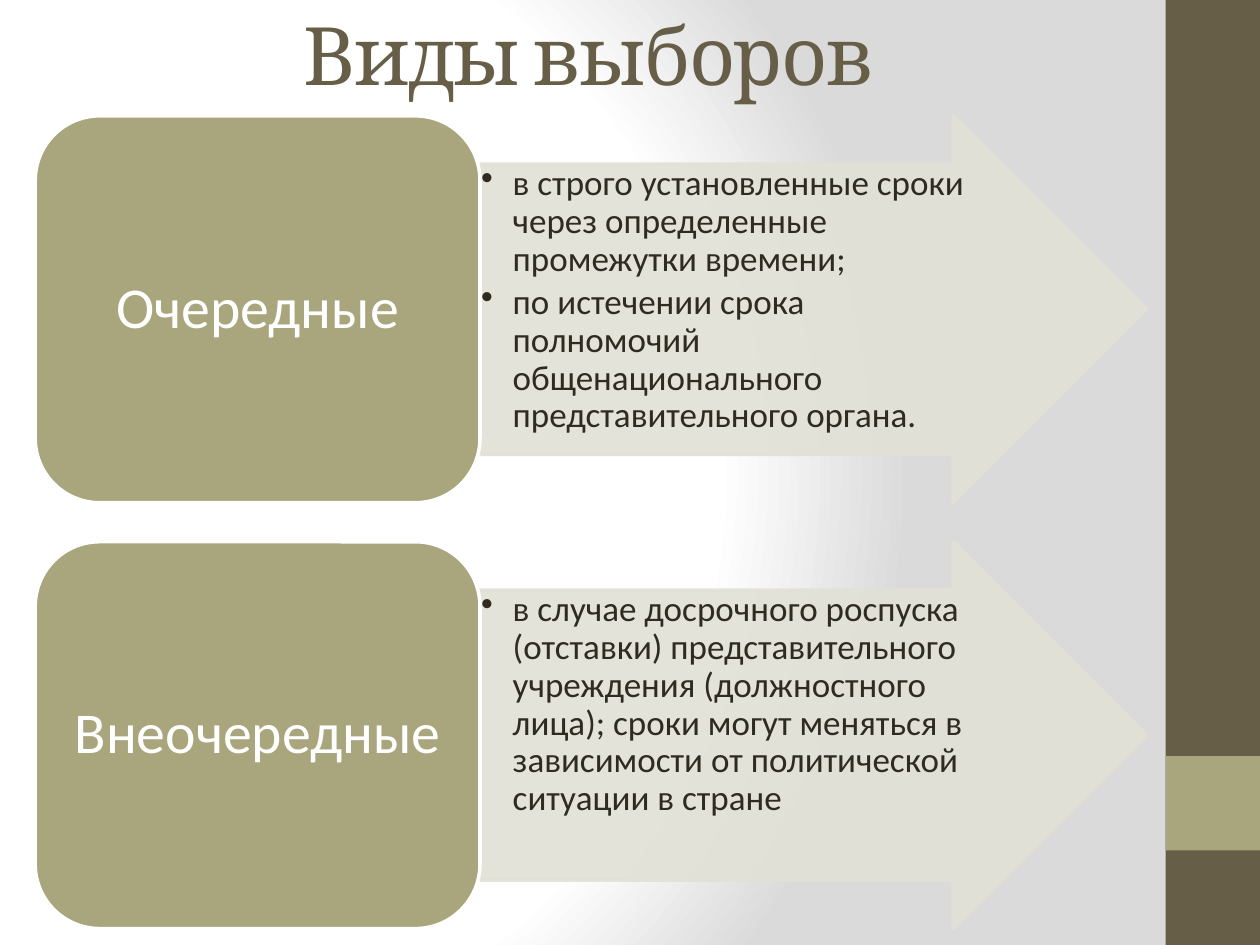
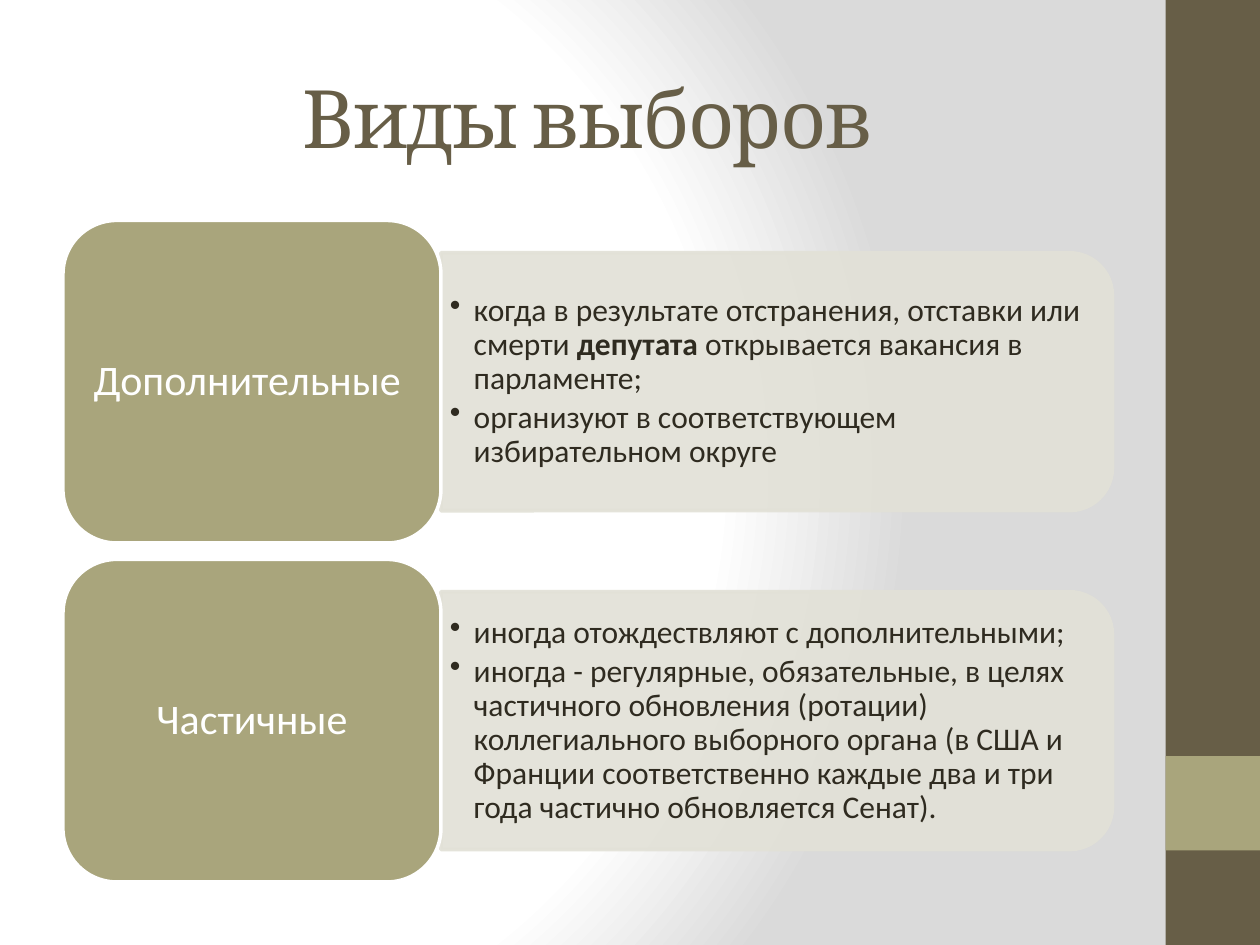
"""Build two slides on kinds of elections: label boxes with explanatory shapes."""
from lxml import etree
from pptx import Presentation
from pptx.dml.color import RGBColor
from pptx.enum.shapes import MSO_SHAPE
from pptx.enum.text import MSO_ANCHOR, PP_ALIGN
from pptx.oxml.ns import qn
from pptx.util import Inches, Pt

RECTANGLE = MSO_SHAPE.RECTANGLE
ROUNDED = MSO_SHAPE.ROUNDED_RECTANGLE
ARROW = MSO_SHAPE.RIGHT_ARROW
ROUND_END = MSO_SHAPE.ROUND_2_SAME_RECTANGLE
TOP, MIDDLE = MSO_ANCHOR.TOP, MSO_ANCHOR.MIDDLE
CENTER, LEFT = PP_ALIGN.CENTER, PP_ALIGN.LEFT

WIDTH, HEIGHT = 10, 7.5
BROWN, OLIVE, PALE, INK, WHITE, GREY = "675E47", "A9A57C", "E2E1D7", "2F2B20", "FFFFFF", "DADADA"
TITLE_FONT, BODY_FONT = "Cambria", "Calibri"
CORNER_INSET = 0.0488
BACKGROUND_STOPS = [(0, WHITE), (75, WHITE), (100, GREY)]
BACKGROUND_FOCUS = {"l": 20, "t": 50, "r": 100, "b": 50}
BANDS = [((WIDTH * 0.925, 0, WIDTH * 0.075, HEIGHT), BROWN),
         ((WIDTH * 0.925, HEIGHT * 0.8, WIDTH * 0.075, HEIGHT * 0.1), OLIVE)]

SLIDES = [
    {
        "title": "Виды выборов", "title_at": (0.51, 0, 8.33, 0.85),
        "body": ARROW, "left": 0.28, "top": 0.92, "label_width": 3.53, "body_width": 5.29,
        "row_height": 3.07, "row_step": 3.38, "anchor": TOP,
        "label_size": 33, "label_margins": (0.14, 0.07),
        "text_size": 20, "text_margins": (0.01, 0.01), "indent": 0.25,
        "rows": [
            ("Очередные", [
                ["в строго установленные сроки через определенные промежутки времени;"],
                ["по истечении срока полномочий общенационального представительного органа."]]),
            ("Внеочередные", [
                ["в случае досрочного роспуска (отставки) представительного учреждения "
                 "(должностного лица); сроки могут меняться в зависимости от политической "
                 "ситуации в стране"]]),
        ],
    },
    {
        "title": "Виды выборов", "title_at": (0.5, 0.3, 8.33, 1.25),
        "body": ROUND_END, "left": 0.5, "top": 1.75, "label_width": 3, "body_width": 5.33,
        "row_height": 2.56, "row_step": 2.69, "anchor": MIDDLE,
        "label_size": 24, "label_margins": (0.1, 0.05),
        "text_size": 18, "text_margins": (0.07, 0.04), "indent": 0.19,
        "rows": [
            ("Дополнительные ", [
                ["когда в результате отстранения, отставки или смерти ", "депутата",
                 " открывается вакансия в парламенте;"],
                ["организуют в соответствующем избирательном округе"]]),
            ("Частичные", [
                ["иногда отождествляют с дополнительными;"],
                ["иногда - регулярные, обязательные, в целях частичного обновления (ротации) "
                 "коллегиального выборного органа (в США и Франции соответственно каждые два "
                 "и три года частично обновляется Сенат)."]]),
        ],
    },
]


def color(value):
    return RGBColor.from_string(value)


def place(box):
    return [Inches(length) for length in box]


def style_run(run, font, size, ink, bold=False):
    run.font.name, run.font.size, run.font.bold = font, Pt(size), bold
    run.font.color.rgb = color(ink)


def add_block(slide, kind, box, fill, line=None, opacity=100):
    shape = slide.shapes.add_shape(kind, *place(box))
    shape.shadow.inherit = False
    shape.fill.solid()
    shape.fill.fore_color.rgb = color(fill)
    if line:
        shape.line.color.rgb = color(line)
        shape.line.width = Pt(2)
    else:
        shape.line.fill.background()
    if opacity < 100:
        for paint in shape.element.spPr.iter(qn("a:srgbClr")):
            etree.SubElement(paint, qn("a:alpha")).set("val", str(opacity * 1000))
    return shape


def add_text(slide, box, paragraphs, size, ink, margins, anchor, align, spacing, indent=0):
    frame = slide.shapes.add_textbox(*place(box)).text_frame
    frame.word_wrap = True
    frame.vertical_anchor = anchor
    frame.margin_left = frame.margin_right = Inches(margins[0])
    frame.margin_top = frame.margin_bottom = Inches(margins[1])
    for index, pieces in enumerate(paragraphs):
        paragraph = frame.add_paragraph() if index else frame.paragraphs[0]
        paragraph.alignment = align
        paragraph.line_spacing = 0.9
        paragraph.space_after = Pt(size * spacing)
        if indent:
            paragraph.level = 1
            properties = paragraph._p.get_or_add_pPr()
            properties.set("marL", str(Inches(indent)))
            properties.set("indent", str(-Inches(indent)))
            etree.SubElement(properties, qn("a:buChar")).set("char", "•")
        for position, piece in enumerate(pieces):
            run = paragraph.add_run()
            run.text = piece
            style_run(run, BODY_FONT, size, ink, bold=position % 2 == 1)


def set_background(layout):
    layout.background.fill.gradient()
    gradient = next(layout.element.iter(qn("a:gradFill")))
    for child in list(gradient):
        gradient.remove(child)
    stops = etree.SubElement(gradient, qn("a:gsLst"))
    for position, value in BACKGROUND_STOPS:
        stop = etree.SubElement(stops, qn("a:gs"), pos=str(position * 1000))
        etree.SubElement(stop, qn("a:srgbClr"), val=value)
    circle = etree.SubElement(gradient, qn("a:path"), path="circle")
    focus = {side: str(share * 1000) for side, share in BACKGROUND_FOCUS.items()}
    etree.SubElement(circle, qn("a:fillToRect"), **focus)


def move_bands_to_layout(slide, layout):
    for box, fill in BANDS:
        band = add_block(slide, RECTANGLE, box, fill)
        layout.shapes._spTree.append(band.element)


def set_title(slide, text, box):
    title = slide.shapes.title
    title.left, title.top, title.width, title.height = place(box)
    title.text_frame.text = text
    title.text_frame.vertical_anchor = MIDDLE
    paragraph = title.text_frame.paragraphs[0]
    paragraph.alignment = CENTER
    run = paragraph.runs[0]
    style_run(run, TITLE_FONT, 46, BROWN)
    run.font._element.set("spc", "-100")


def add_body(slide, kind, left, top, width, row_height):
    """Draw the shape behind a row's text and return the box for that text."""
    if kind == ARROW:
        arrow = add_block(slide, kind, (left, top, width, row_height), PALE, PALE, 90)
        arrow.adjustments[0], arrow.adjustments[1] = 0.75, 0.5
        return left, top + row_height / 8, width - row_height * 3 / 8, row_height * 0.75
    height = row_height * 0.8
    center_x, center_y = left + width / 2, top + row_height / 2
    upright = (center_x - height / 2, center_y - width / 2, height, width)
    add_block(slide, kind, upright, PALE, PALE, 90).rotation = 90
    inset = height * CORNER_INSET
    return left, center_y - height / 2 + inset, width - inset, height - 2 * inset


def add_row(slide, content, top, label, paragraphs):
    left, width, height = content["left"], content["label_width"], content["row_height"]
    text_box = add_body(slide, content["body"], left + width, top, content["body_width"], height)
    add_text(slide, text_box, paragraphs, content["text_size"], INK, content["text_margins"],
             content["anchor"], LEFT, 0.15, content["indent"])
    add_block(slide, ROUNDED, (left, top, width, height), OLIVE, WHITE)
    inset = height * CORNER_INSET
    label_box = (left + inset, top + inset, width - 2 * inset, height - 2 * inset)
    add_text(slide, label_box, [[label]], content["label_size"], WHITE,
             content["label_margins"], MIDDLE, CENTER, 0.35)


def main():
    presentation = Presentation()
    presentation.slide_width, presentation.slide_height = place((WIDTH, HEIGHT))
    layout = presentation.slide_layouts[5]
    set_background(layout)
    for number, content in enumerate(SLIDES):
        slide = presentation.slides.add_slide(layout)
        if number == 0:
            move_bands_to_layout(slide, layout)
        set_title(slide, content["title"], content["title_at"])
        for index, (label, paragraphs) in enumerate(content["rows"]):
            add_row(slide, content, content["top"] + index * content["row_step"], label, paragraphs)
    presentation.save("out.pptx")


if __name__ == "__main__":
    main()
